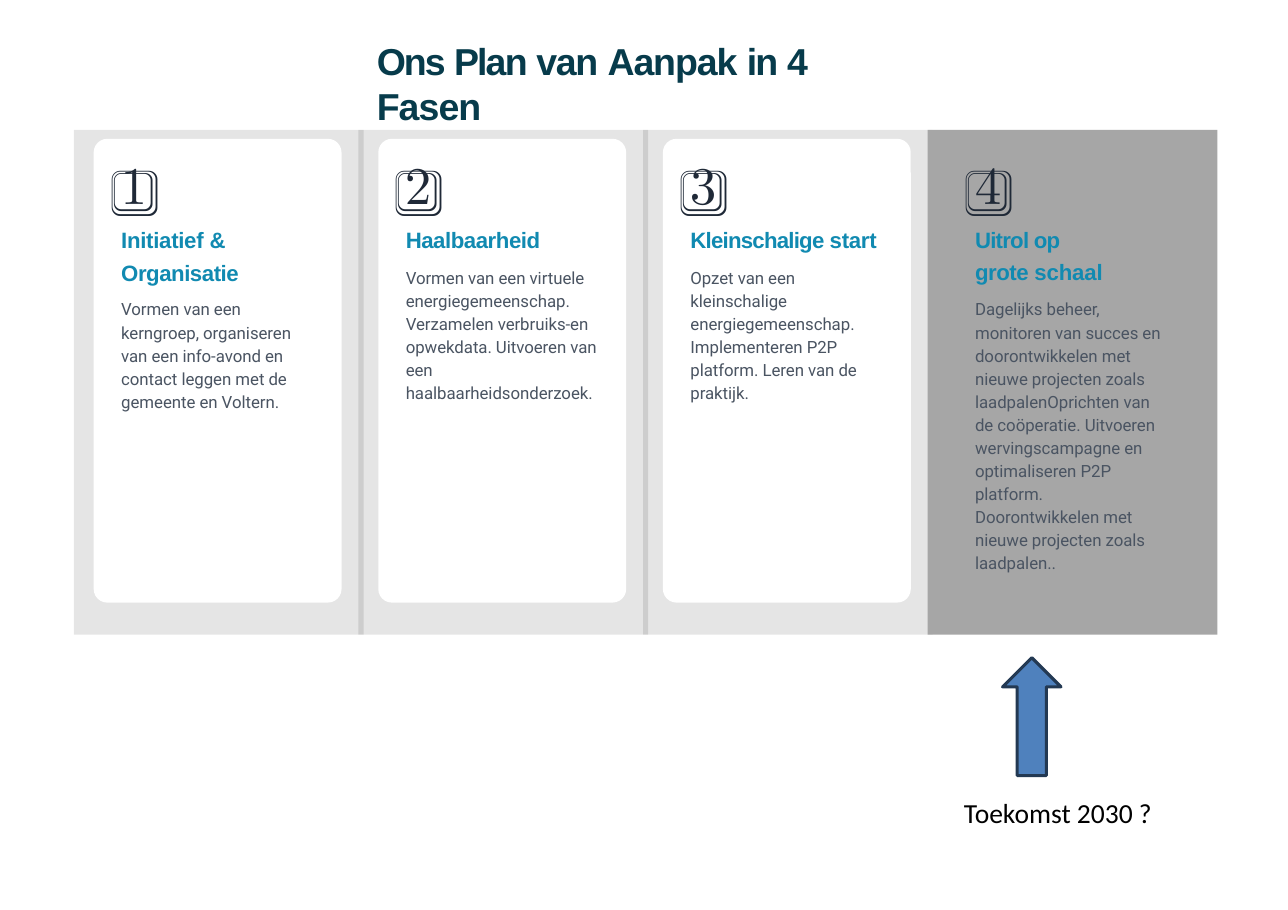
from lxml import etree
from pptx import Presentation
from pptx.dml.color import RGBColor
from pptx.enum.shapes import MSO_SHAPE
from pptx.oxml.ns import qn
from pptx.util import Inches, Pt

RECT = MSO_SHAPE.RECTANGLE
ROUNDED = MSO_SHAPE.ROUNDED_RECTANGLE
UP_ARROW = MSO_SHAPE.UP_ARROW

NAVY = RGBColor(0x07, 0x3B, 0x4B)
TEAL = RGBColor(0x11, 0x8A, 0xB1)
SLATE = RGBColor(0x4A, 0x54, 0x62)
INK = RGBColor(0x1F, 0x29, 0x37)
BLACK = RGBColor(0, 0, 0)
WHITE = RGBColor(0xFF, 0xFF, 0xFF)
GREY = RGBColor(0xA6, 0xA6, 0xA6)
BLUE = RGBColor(0x4F, 0x81, 0xBD)
DARK_BLUE = RGBColor(0x23, 0x39, 0x53)

TITLE = [("Ons ", -1.3), ("Plan ", -1.2), ("van ", -0.8), ("Aanpak ", -0.7),
         ("in ", -1.1), ("4 ", 2.4), ("Fasen", -0.6)]
FUTURE = "Toekomst 2030 ?"
PHASES = [
    {"number": "1️⃣", "width": 1.09, "body_width": 1.63, "lines": 2,
     "heading": [[("Initiatief ", -0.2), ("&", -0.6)], [("Organisatie", -0.3)]],
     "body": ["Vormen van een kerngroep, organiseren van een info-avond en "
              "contact leggen met de gemeente en Voltern."]},
    {"number": "2️⃣", "width": 1.25, "body_width": 1.76, "lines": 1,
     "heading": [[("Haalbaarheid", -0.3)]],
     "body": ["Vormen van een virtuele energiegemeenschap.",
              "Verzamelen verbruiks-en opwekdata. Uitvoeren van een "
              "haalbaarheidsonderzoek."]},
    {"number": "3️⃣", "width": 1.75, "body_width": 1.58, "lines": 1,
     "heading": [[("Kleinschalige ", -0.5), ("start", -0.2)]],
     "body": ["Opzet van een kleinschalige energiegemeenschap. "
              "Implementeren P2P platform. Leren van de praktijk."]},
    {"number": "4️⃣", "width": 1.25, "body_width": 1.75, "lines": 2,
     "heading": [[("Uitrol op ", -0.5), ("grote ", -0.3), ("schaal", -0.1)]],
     "body": ["Dagelijks beheer, monitoren van succes en doorontwikkelen met "
              "nieuwe projecten zoals laadpalenOprichten van de coöperatie. "
              "Uitvoeren wervingscampagne en optimaliseren P2P platform.",
              "Doorontwikkelen met nieuwe projecten zoals laadpalen.."]},
]

WIDTH, HEIGHT = 11.69, 8.26
PANEL_LEFT, PANEL_TOP, PANEL_W, PANEL_H = 0.67, 1.18, 2.63, 4.58
PITCH = (8.42 - PANEL_LEFT) / 3
CARD_DX, CARD_DY, CARD_W, CARD_H = 0.18, 0.08, 2.25, 4.21
TEXT_DX, HEADING_TOP, HEADING_LINE = 0.42, 1.12, 0.29
BODY_TOP = 2.39

prs = Presentation()
prs.slide_width, prs.slide_height = Inches(WIDTH), Inches(HEIGHT)
slide = prs.slides.add_slide(prs.slide_layouts[6])


def add_shape(kind, x, y, w, h, fill):
    sp = slide.shapes.add_shape(kind, Inches(x), Inches(y), Inches(w), Inches(h))
    sp.shadow.inherit = False
    sp.fill.solid()
    sp.fill.fore_color.rgb = fill
    sp.line.fill.background()
    return sp


def add_text(x, y, w, h, inset=None):
    tf = slide.shapes.add_textbox(Inches(x), Inches(y), Inches(w), Inches(h)).text_frame
    tf.word_wrap = True
    if inset is not None:
        tf.margin_left, tf.margin_top = Inches(0.01), Inches(inset)
        tf.margin_right = tf.margin_bottom = 0
    return tf


def write(p, runs, font, size, color, bold=False):
    for text, spacing in runs:
        r = p.add_run()
        r.text = text
        r.font.name, r.font.size, r.font.bold = font, Pt(size), bold
        r.font.color.rgb = color
        r._r.get_or_add_rPr().set("spc", str(round(spacing * 100)))


tf = add_text(3.41, 0.33, 4.88, 0.44, 0.02)
write(tf.paragraphs[0], TITLE, "Arial", 24.5, NAVY, True)

for i, phase in enumerate(PHASES):
    x = PANEL_LEFT + i * PITCH
    last = i == len(PHASES) - 1
    panel = add_shape(RECT, x, PANEL_TOP, PANEL_W, PANEL_H, GREY if last else BLACK)
    if not last:
        color = panel._element.spPr.find(qn("a:solidFill"))[0]
        etree.SubElement(color, qn("a:alpha")).set("val", "10000")
    card = add_shape(ROUNDED, x + CARD_DX, PANEL_TOP + CARD_DY, CARD_W, CARD_H,
                     GREY if last else WHITE)
    card.adjustments[0] = 0.055

    extra = (phase["lines"] - 1) * HEADING_LINE
    tf = add_text(x + TEXT_DX, HEADING_TOP, phase["width"], 1.19 + extra, 0.26)
    write(tf.paragraphs[0], [(phase["number"], -7.8)], "Lato", 34, INK)
    for n, runs in enumerate(phase["heading"]):
        p = tf.add_paragraph()
        p.space_before = Pt(3.6 if n else 4.3 if last else 8)
        if last:
            p.line_spacing = 1.21
        write(p, runs, "Arial", 14.5, TEAL, True)

    tf = add_text(x + TEXT_DX, BODY_TOP + extra, phase["body_width"], 1.28, 0.01)
    for n, text in enumerate(phase["body"]):
        p = tf.add_paragraph() if n else tf.paragraphs[0]
        p.line_spacing = 1.14
        write(p, [(text, -0.05)], "Roboto", 11, SLATE)

arrow = add_shape(UP_ARROW, 9.1, 5.97, 0.53, 1.07, BLUE)
arrow.line.color.rgb = DARK_BLUE
arrow.line.width = Pt(2)

tf = add_text(8.65, 7.18, 2.17, 0.4)
write(tf.paragraphs[0], [(FUTURE, 0)], "Calibri", 18, BLACK)

prs.save("out.pptx")
